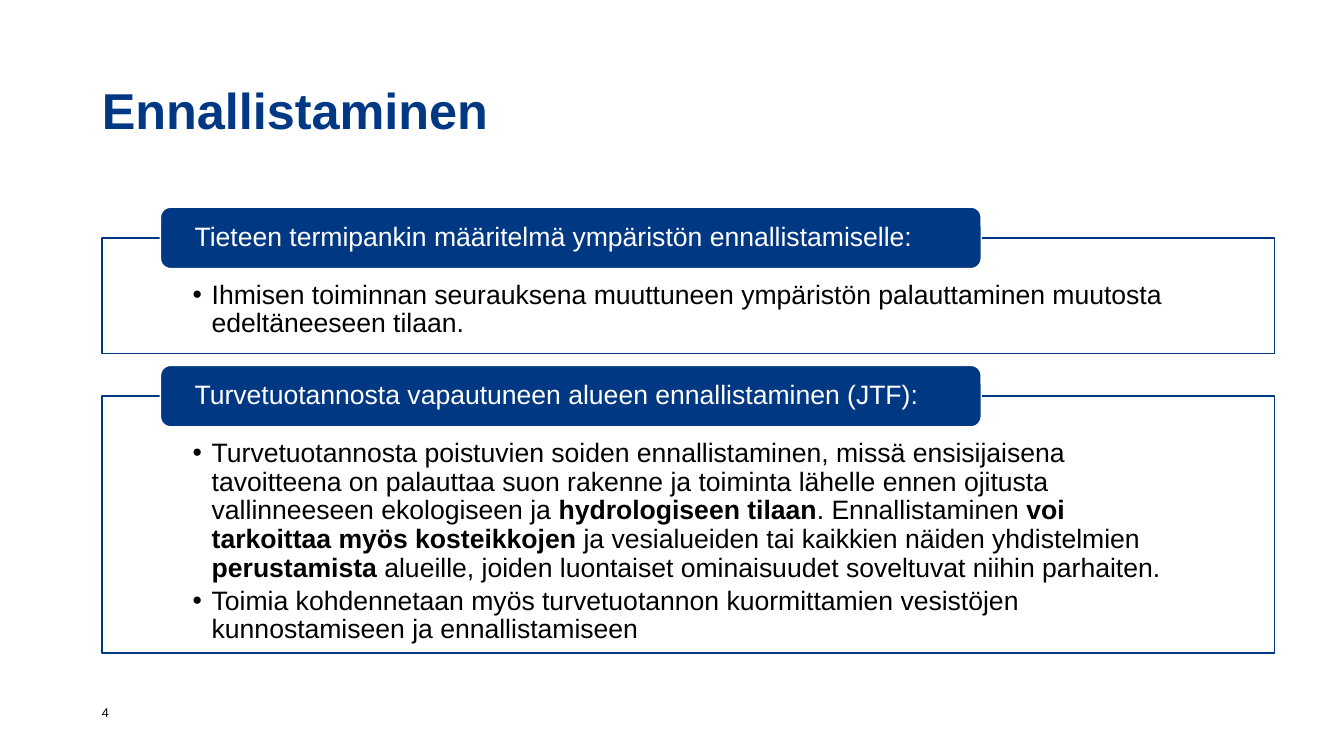
from lxml.etree import SubElement
from pptx import Presentation
from pptx.dml.color import RGBColor
from pptx.enum.shapes import MSO_SHAPE
from pptx.enum.text import MSO_ANCHOR, MSO_AUTO_SIZE, PP_ALIGN
from pptx.oxml.ns import qn
from pptx.util import Inches, Pt

NAVY = RGBColor(0x00, 0x38, 0x83)
WHITE = RGBColor(0xFF, 0xFF, 0xFF)
BLACK = RGBColor(0x00, 0x00, 0x00)

WIDE, HIGH = 13.33, 7.5
LEFT, SPAN = 1.01, 11.63
TAB_LEFT, TAB_WIDE, TAB_HIGH = LEFT + SPAN * 0.05, SPAN * 0.7, 0.61
TAB_RISE = TAB_HIGH / 2
GAP = 0.42

PARTS = [
    ("Tieteen termipankin määritelmä ympäristön ennallistamiselle:", 1.15, [
        "Ihmisen toiminnan seurauksena muuttuneen ympäristön palauttaminen "
        "muutosta edeltäneeseen tilaan.",
    ]),
    ("Turvetuotannosta vapautuneen alueen ennallistaminen (JTF):", 2.55, [
        "Turvetuotannosta poistuvien soiden ennallistaminen, missä ensisijaisena "
        "tavoitteena on palauttaa suon rakenne ja toiminta lähelle ennen ojitusta "
        "vallinneeseen ekologiseen ja **hydrologiseen tilaan**. Ennallistaminen "
        "**voi tarkoittaa myös kosteikkojen** ja vesialueiden tai kaikkien näiden "
        "yhdistelmien **perustamista** alueille, joiden luontaiset ominaisuudet "
        "soveltuvat niihin parhaiten.",
        "Toimia kohdennetaan myös turvetuotannon kuormittamien vesistöjen "
        "kunnostamiseen ja ennallistamiseen",
    ]),
]


def place(shape, left, top, width, height):
    """Move and size a shape, in inches."""
    shape.left, shape.top = Inches(left), Inches(top)
    shape.width, shape.height = Inches(width), Inches(height)


def paint(shape, fill, line):
    """Give a shape a plain fill and a thin line."""
    shape.fill.solid()
    shape.fill.fore_color.rgb = fill
    shape.line.color.rgb = line
    shape.line.width = Pt(1)


def mark(para):
    """Give a paragraph a round bullet and a hanging indent."""
    props = para._p.get_or_add_pPr()
    props.set("marL", str(Inches(0.19)))
    props.set("indent", str(-Inches(0.19)))
    SubElement(props, qn("a:buFont")).set("typeface", "Arial")
    SubElement(props, qn("a:buChar")).set("char", "•")


def write(shape, *texts, size=19, color=BLACK, bold=False, bullet=False,
          anchor=MSO_ANCHOR.MIDDLE, inset=(0, 0, 0, 0), after=0):
    """Fill a shape with paragraphs, where ** switches bold."""
    frame = shape.text_frame
    frame.word_wrap = True
    frame.auto_size = MSO_AUTO_SIZE.NONE
    frame.vertical_anchor = anchor
    (frame.margin_left, frame.margin_top,
     frame.margin_right, frame.margin_bottom) = map(Inches, inset)
    for i, text in enumerate(texts):
        para = frame.add_paragraph() if i else frame.paragraphs[0]
        para.alignment = PP_ALIGN.LEFT
        para.line_spacing = 0.9
        para.space_before, para.space_after = Pt(0), Pt(after)
        if bullet:
            mark(para)
        for j, piece in enumerate(text.split("**")):
            run = para.add_run()
            run.text = piece
            run.font.name, run.font.size = "Arial", Pt(size)
            run.font.bold = bold or j % 2 == 1
            run.font.color.rgb = color


def add_list(body, top, height, items):
    """Turn a body placeholder into a framed list."""
    place(body, LEFT, top, SPAN, height)
    paint(body, WHITE, NAVY)
    write(body, *items, bullet=True, anchor=MSO_ANCHOR.TOP,
          inset=(0.9, 0.43, 0.9, 0.15), after=2.85)


def add_tab(slide, top, text):
    """Add a rounded heading over the top edge of a list."""
    tab = slide.shapes.add_shape(MSO_SHAPE.ROUNDED_RECTANGLE, 0, 0, 0, 0)
    place(tab, TAB_LEFT, top - TAB_RISE, TAB_WIDE, TAB_HIGH)
    tab.shadow.inherit = False
    paint(tab, NAVY, WHITE)
    write(tab, text, color=WHITE, inset=(0.31, 0, 0.31, 0))


def main():
    """Build the slide and save it."""
    deck = Presentation()
    deck.slide_width, deck.slide_height = Inches(WIDE), Inches(HIGH)
    slide = deck.slides.add_slide(deck.slide_layouts[3])
    title, *bodies = slide.placeholders
    place(title, LEFT, 0.51, SPAN, 1.22)
    write(title, "Ennallistaminen", size=36, color=NAVY, bold=True)

    top = 2.36
    for body, (head, height, items) in zip(bodies, PARTS):
        add_list(body, top, height, items)
        add_tab(slide, top, head)
        top += height + GAP

    number = slide.shapes.add_textbox(0, 0, 0, 0)
    place(number, LEFT, 6.97, 0.53, 0.22)
    write(number, "4", size=9)
    deck.save("out.pptx")


if __name__ == "__main__":
    main()
